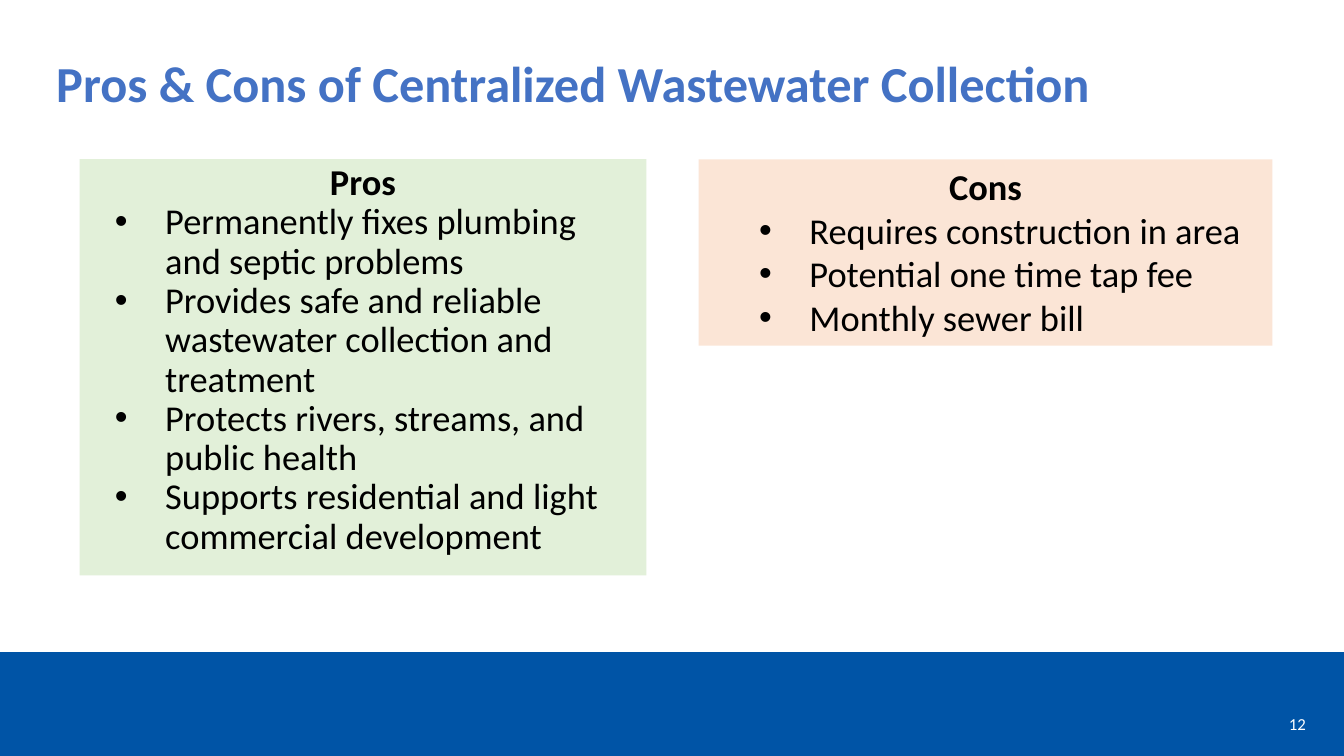
from dataclasses import dataclass

from lxml import etree
from pptx import Presentation
from pptx.dml.color import RGBColor
from pptx.enum import shapes, text
from pptx.oxml import ns
from pptx.shapes.autoshape import Shape
from pptx.slide import Slide
from pptx.util import Inches, Pt

FONT = "Calibri"
HANGING = 0.5


@dataclass(frozen=True)
class Area:
    left: float
    top: float
    width: float
    height: float

    def lengths(self) -> list[Inches]:
        return [Inches(n) for n in (self.left, self.top, self.width, self.height)]


@dataclass(frozen=True)
class Panel:
    heading: str
    points: tuple[str, ...]
    area: Area
    fill: str
    indent: float
    line_spacing: float


PANELS = (
    Panel(
        "Pros",
        (
            "Permanently fixes plumbing and septic problems",
            "Provides safe and reliable wastewater collection and treatment",
            "Protects rivers, streams, and public health",
            "Supports residential and light commercial development",
        ),
        Area(0.79, 1.58, 5.62, 4.13), "E2F0D9", 0.75, 0.9,
    ),
    Panel(
        "Cons",
        (
            "Requires construction in area",
            "Potential one time tap fee",
            "Monthly sewer bill",
        ),
        Area(6.93, 1.58, 5.69, 1.85), "FBE5D6", 1.0, 1.0,
    ),
)


def color(value: str) -> RGBColor:
    return RGBColor.from_string(value)


def add_block(page: Slide, area: Area, fill: str) -> Shape:
    block = page.shapes.add_shape(shapes.MSO_SHAPE.RECTANGLE, *area.lengths())
    block.shadow.inherit = False
    block.fill.solid()
    block.fill.fore_color.rgb = color(fill)
    block.line.fill.background()
    block.text_frame.vertical_anchor = text.MSO_ANCHOR.TOP
    return block


def add_label(page: Slide, area: Area) -> Shape:
    box = page.shapes.add_textbox(*area.lengths())
    box.text_frame.word_wrap = True
    box.text_frame.vertical_anchor = text.MSO_ANCHOR.MIDDLE
    return box


def write(box: Shape, words: str, *, size: float, ink: str = "000000",
          bold: bool = False, align: text.PP_ALIGN = text.PP_ALIGN.LEFT,
          line_spacing: float = 1.0, bullet_indent: float = 0) -> None:
    frame = box.text_frame
    para = frame.add_paragraph() if frame.text else frame.paragraphs[0]
    para.alignment = align
    para.line_spacing = line_spacing
    if bullet_indent:
        properties = para._p.get_or_add_pPr()
        properties.set("marL", str(Inches(bullet_indent)))
        properties.set("indent", str(-Inches(HANGING)))
        etree.SubElement(properties, ns.qn("a:buFont"), typeface="Arial")
        etree.SubElement(properties, ns.qn("a:buChar"), char="•")
    span = para.add_run()
    span.text = words
    span.font.name = FONT
    span.font.size = Pt(size)
    span.font.bold = bold
    span.font.color.rgb = color(ink)


def add_panel(page: Slide, panel: Panel) -> None:
    block = add_block(page, panel.area, panel.fill)
    write(block, panel.heading, size=26, bold=True,
          align=text.PP_ALIGN.CENTER, line_spacing=panel.line_spacing)
    for point in panel.points:
        write(block, point, size=26, line_spacing=panel.line_spacing,
              bullet_indent=panel.indent)


def main() -> None:
    deck = Presentation()
    deck.slide_width, deck.slide_height = Inches(13.33), Inches(7.5)
    page = deck.slides.add_slide(deck.slide_layouts[6])

    add_block(page, Area(0, 6.47, 13.33, 1.03), "0054A6")
    title = add_label(page, Area(0.46, 0.13, 11.06, 1.45))
    write(title, "Pros & Cons of Centralized Wastewater Collection",
          size=36, ink="4472C4", bold=True, line_spacing=0.9)
    for panel in PANELS:
        add_panel(page, panel)
    number = add_label(page, Area(12.37, 6.98, 0.68, 0.4))
    write(number, "12", size=12, ink="FFFFFF", align=text.PP_ALIGN.RIGHT)

    deck.save("out.pptx")


if __name__ == "__main__":
    main()
